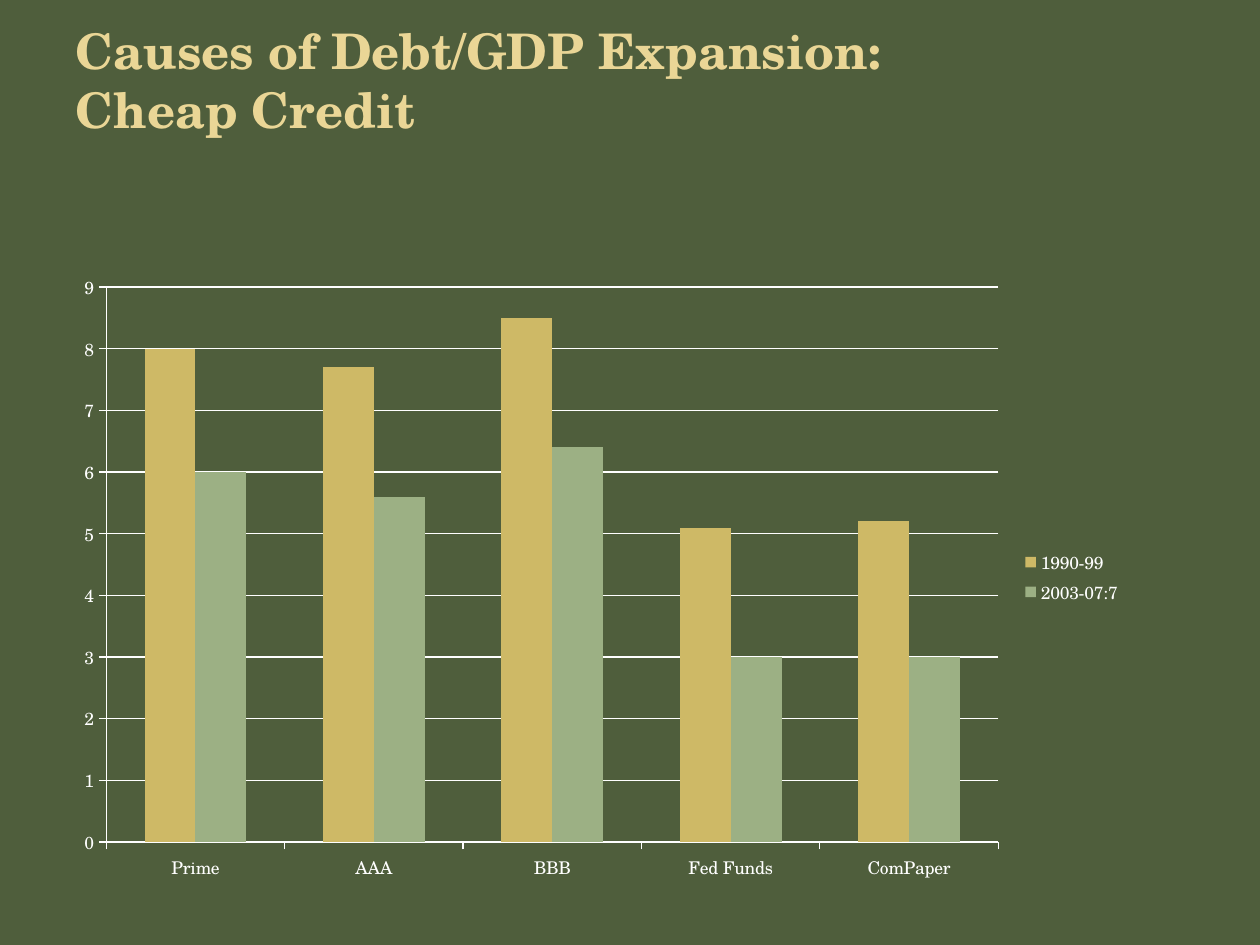
import pptx
import pptx.util
import pptx.chart.data
import pptx.dml.color
import pptx.enum.chart
import pptx.enum.text

FONT = "TeX Gyre Schola"
HUES = {"back": "4F5E3C", "title": "EAD696", "text": "FFFFFF",
        "early": "CEB966", "late": "9CB084"}
WIDE, HIGH = pptx.util.Inches(10), pptx.util.Inches(7.5)
GROUPS = ["Prime", "AAA", "BBB", "Fed Funds", "ComPaper"]
RATES = [("1990-99", "early", [8, 7.7, 8.5, 5.1, 5.2]),
         ("2003-07:7", "late", [6, 5.6, 6.4, 3, 3])]


def rgb(name):
    return pptx.dml.color.RGBColor.from_string(HUES[name])


def paint(fill, name):
    fill.solid()
    fill.fore_color.rgb = rgb(name)


def apply(item, **values):
    for key, value in values.items():
        setattr(item, key, value)


def style(font, hue, size, bold=False):
    apply(font, name=FONT, size=pptx.util.Pt(size), bold=bold)
    font.color.rgb = rgb(hue)


def inches(*box):
    return [pptx.util.Inches(side) for side in box]


def add_title(slide, box):
    title = slide.shapes.title
    apply(title, **dict(zip(("left", "top", "width", "height"), box)))
    frame = title.text_frame
    apply(frame, word_wrap=True,
          vertical_anchor=pptx.enum.text.MSO_ANCHOR.MIDDLE)
    frame.text = "Causes of Debt/GDP Expansion:\vCheap Credit"
    line = frame.paragraphs[0]
    line.alignment = pptx.enum.text.PP_ALIGN.LEFT
    for run in line.runs:
        style(run.font, "title", 28, True)


def rule(line):
    line.color.rgb = rgb("text")
    line.width = pptx.util.Pt(0.75)


def add_rates(slide, box):
    data = pptx.chart.data.CategoryChartData()
    data.categories = GROUPS
    for name, _, values in RATES:
        data.add_series(name, values)
    kind = pptx.enum.chart.XL_CHART_TYPE.COLUMN_CLUSTERED
    chart = slide.shapes.add_chart(kind, *box, data).chart
    apply(chart, has_title=False, has_legend=True)
    style(chart.font, "text", 10)
    apply(chart.legend, include_in_layout=False,
          position=pptx.enum.chart.XL_LEGEND_POSITION.RIGHT)

    plot = chart.plots[0]
    apply(plot, gap_width=150, overlap=0, vary_by_categories=False)
    for bars, (_, hue, _) in zip(plot.series, RATES):
        paint(bars.format.fill, hue)

    for axis in (chart.category_axis, chart.value_axis):
        axis.major_tick_mark = pptx.enum.chart.XL_TICK_MARK.OUTSIDE
        rule(axis.format.line)
    apply(chart.value_axis, minimum_scale=0, maximum_scale=9,
          major_unit=1, has_major_gridlines=True)
    rule(chart.value_axis.major_gridlines.format.line)


def main():
    deck = pptx.Presentation()
    apply(deck, slide_width=WIDE, slide_height=HIGH)
    slide = deck.slides.add_slide(deck.slide_layouts[5])
    paint(slide.background.fill, "back")
    add_title(slide, inches(0.5, 0.17, 9, 0.92))
    add_rates(slide, inches(0.5, 2.08, 8.5, 5))
    deck.save("out.pptx")


if __name__ == "__main__":
    main()
